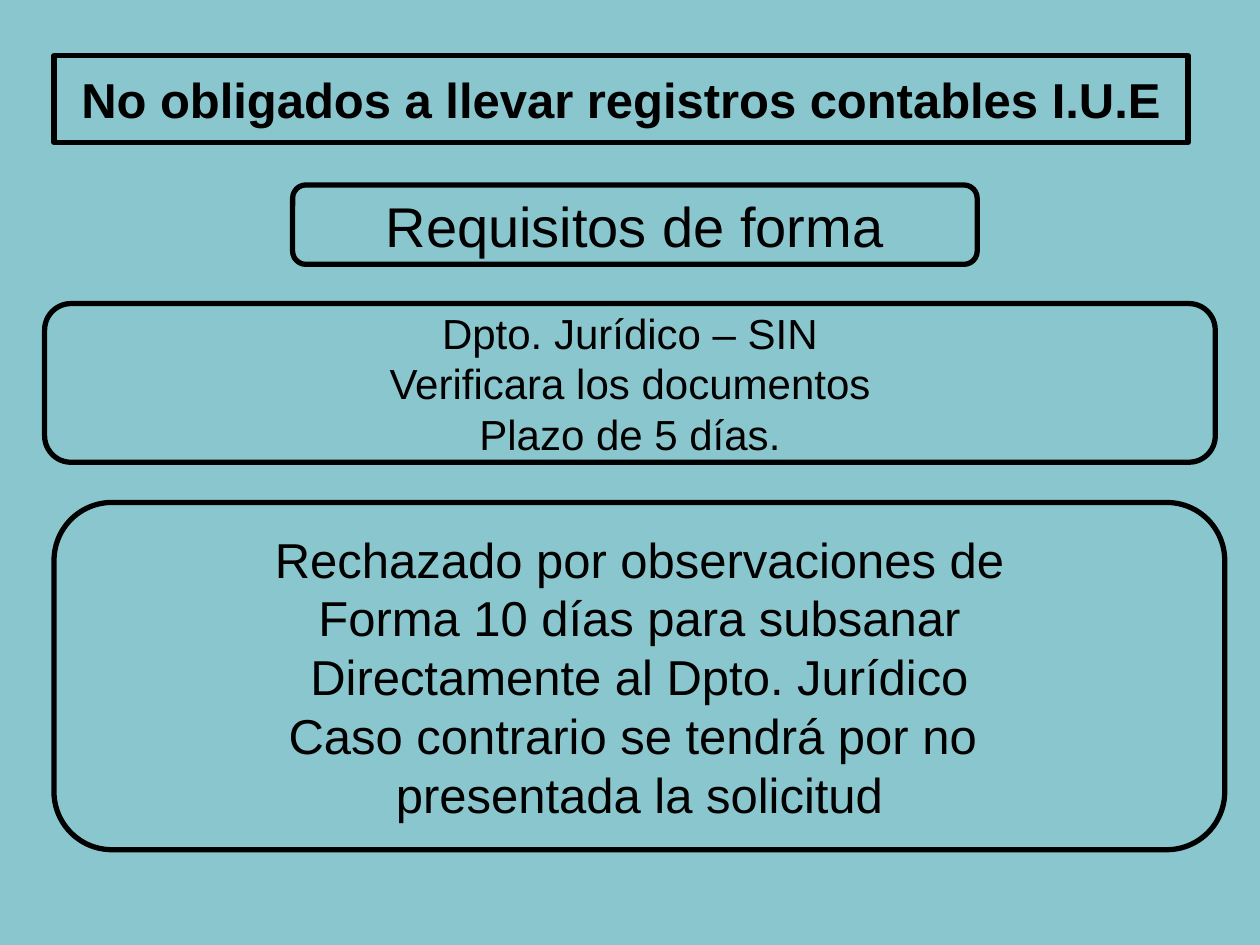
from pptx import Presentation
from pptx.dml.color import RGBColor
from pptx.enum.shapes import MSO_SHAPE
from pptx.enum.text import MSO_ANCHOR, PP_ALIGN
from pptx.util import Cm, Pt

COLORS = {"background": "8AC6CD", "ink": "000000"}
FONT = "Arial"


def write_text(frame, lines, size, bold=False, wrap=False):
    frame.word_wrap = wrap
    frame.vertical_anchor = MSO_ANCHOR.MIDDLE
    for index, line in enumerate(lines):
        paragraph = frame.paragraphs[0] if index == 0 else frame.add_paragraph()
        paragraph.alignment = PP_ALIGN.CENTER
        run = paragraph.add_run()
        run.text = line
        run.font.name = FONT
        run.font.size = Pt(size)
        run.font.bold = bold
        run.font.color.rgb = RGBColor.from_string(COLORS["ink"])


def add_outlined_box(slide, box, lines, kind=MSO_SHAPE.ROUNDED_RECTANGLE, **text_format):
    """Place an unfilled box; box is left, top, width and height in centimetres."""
    shape = slide.shapes.add_shape(kind, *map(Cm, box))
    shape.shadow.inherit = False
    shape.fill.background()
    shape.line.color.rgb = RGBColor.from_string(COLORS["ink"])
    shape.line.width = Pt(3)
    write_text(shape.text_frame, lines, **text_format)


def add_title(slide, box):
    add_outlined_box(slide, box, ["No obligados a llevar registros contables I.U.E"],
                     kind=MSO_SHAPE.RECTANGLE, size=28, bold=True, wrap=True)


def add_heading(slide, box):
    add_outlined_box(slide, box, ["Requisitos de forma"], size=32)


def add_review_step(slide, box):
    add_outlined_box(slide, box, [
        "Dpto. Jurídico – SIN",
        "Verificara los documentos",
        "Plazo de 5 días.",
    ], size=24)


def add_rejection_step(slide, box):
    add_outlined_box(slide, box, [
        "Rechazado por observaciones de",
        "Forma 10 días para subsanar",
        "Directamente al Dpto. Jurídico",
        "Caso contrario se tendrá por no ",
        "presentada la solicitud",
    ], size=28)


def main():
    presentation = Presentation()
    presentation.slide_width, presentation.slide_height = Cm(25.4), Cm(19.05)
    slide = presentation.slides.add_slide(presentation.slide_layouts[6])
    slide.background.fill.solid()
    slide.background.fill.fore_color.rgb = RGBColor.from_string(COLORS["background"])

    add_title(slide, (1.09, 1.12, 22.86, 1.75))
    add_heading(slide, (5.9, 3.73, 13.8, 1.6))
    add_review_step(slide, (0.9, 6.12, 23.6, 3.2))
    add_rejection_step(slide, (1.09, 10.13, 23.6, 7))

    presentation.save("out.pptx")


if __name__ == "__main__":
    main()
